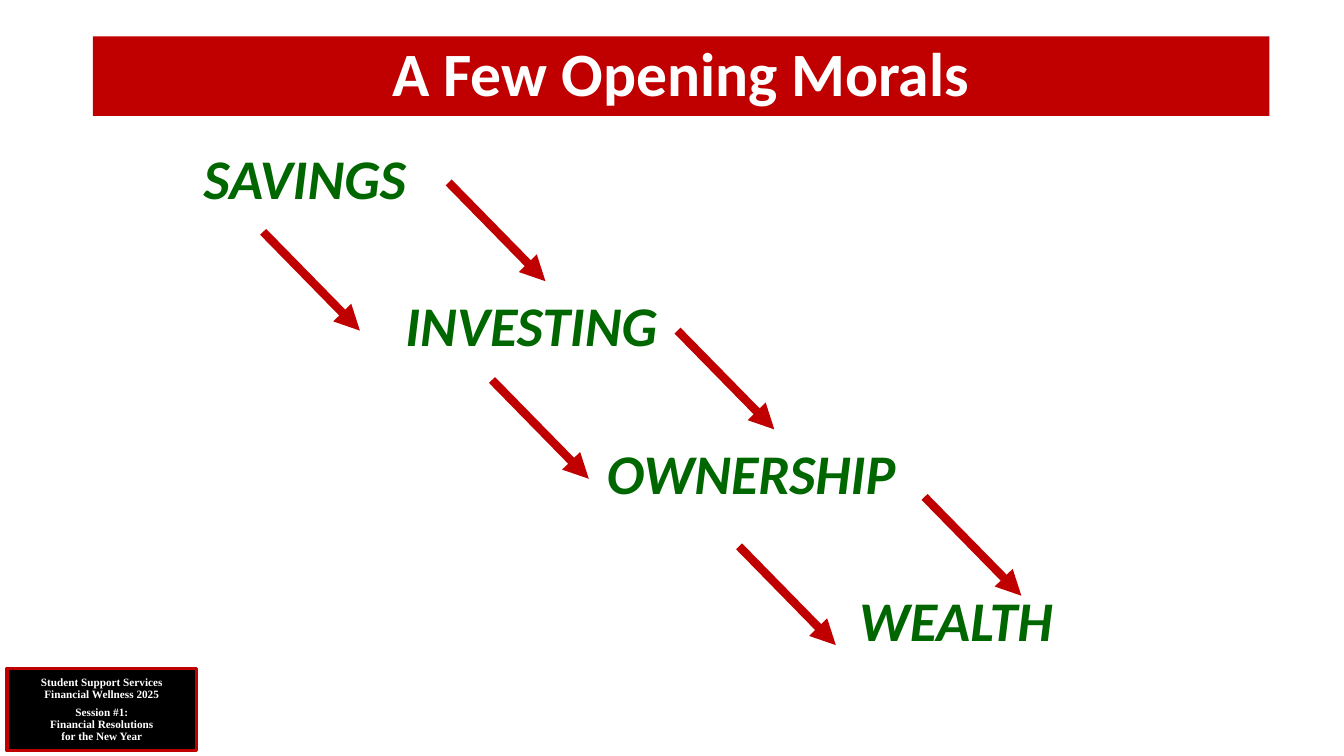
import typing

import pptx
import pptx.dml.color
import pptx.enum.shapes
import pptx.enum.text
import pptx.oxml.ns
import pptx.util
from lxml import etree

PX = 9144  # 100 px to the inch
RED, GREEN, WHITE, BLACK = "C00000", "006600", "FFFFFF", "000000"
Anchor = pptx.enum.text.MSO_ANCHOR
Align = pptx.enum.text.PP_ALIGN


class Step(typing.NamedTuple):
    word: str
    indent: int


class Start(typing.NamedTuple):
    x: int
    y: int


STEPS = [Step("SAVINGS", 100), Step("INVESTING", 300),
         Step("OWNERSHIP", 500), Step("WEALTH", 750)]
STARTS = [Start(261, 230), Start(488, 377), Start(733, 542)]
SHIFT = Start(184, -49)  # from the lower arrow of a pair to the upper one
RUN, DROP = 96, 98
NOTES = ["Student Support Services", "Financial Wellness 2025",
         "Session #1:\vFinancial Resolutions\vfor the New Year"]


def px(count: int) -> pptx.util.Emu:
    return pptx.util.Emu(count * PX)


def color(code: str) -> pptx.dml.color.RGBColor:
    return pptx.dml.color.RGBColor.from_string(code)


def paint(target, code: str) -> None:
    target.fill.solid()
    target.fill.fore_color.rgb = color(code)


def place(shape, left: int, top: int, width: int, height: int) -> None:
    shape.left, shape.top = px(left), px(top)
    shape.width, shape.height = px(width), px(height)


def setup(frame, anchor) -> None:
    frame.word_wrap = True
    frame.auto_size = pptx.enum.text.MSO_AUTO_SIZE.NONE
    frame.vertical_anchor = anchor


def style(para, size: int, face: str, code: str, align, gap: int = 0) -> None:
    para.alignment = align
    para.line_spacing = 0.9
    para.space_before = pptx.util.Pt(gap)
    para.font.size = pptx.util.Pt(size)
    para.font.name = face
    para.font.bold = True
    para.font.color.rgb = color(code)


def lines(frame, texts: list[str]) -> list:
    """Fill the frame with one paragraph per text."""
    paras = [frame.paragraphs[0]]
    paras += [frame.add_paragraph() for _ in texts[1:]]
    for para, text in zip(paras, texts):
        para.text = text
    return paras


def title(slide) -> None:
    shape = slide.shapes.title
    place(shape, 92, 36, 1167, 79)
    paint(shape, RED)
    setup(shape.text_frame, Anchor.MIDDLE)
    para, = lines(shape.text_frame, ["A Few Opening Morals"])
    style(para, 44, "Calibri", WHITE, Align.CENTER)


def stairs(slide) -> None:
    body = slide.placeholders[1]
    place(body, 92, 145, 1150, 530)
    setup(body.text_frame, Anchor.TOP)
    paras = lines(body.text_frame, [step.word for step in STEPS])
    for rank, (step, para) in enumerate(zip(STEPS, paras)):
        props = para._p.get_or_add_pPr()
        props.set("marL", str(px(step.indent)))
        props.set("indent", "0")
        etree.SubElement(props, pptx.oxml.ns.qn("a:buNone"))
        style(para, 40, "Calibri", GREEN, Align.LEFT, 62 if rank else 0)
        para.font.italic = True


def arrow(slide, x: int, y: int) -> None:
    link = slide.shapes.add_connector(
        pptx.enum.shapes.MSO_CONNECTOR.STRAIGHT,
        px(x), px(y), px(x + RUN), px(y + DROP))
    link.line.color.rgb = color(RED)
    link.line.width = pptx.util.Pt(6)
    qn = pptx.oxml.ns.qn
    etree.SubElement(link.line._get_or_add_ln(), qn("a:tailEnd"), type="triangle")
    etree.SubElement(link._element.spPr, qn("a:effectLst"))


def badge(slide) -> None:
    box = slide.shapes.add_shape(
        pptx.enum.shapes.MSO_SHAPE.RECTANGLE, px(7), px(663), px(188), px(82))
    box.shadow.inherit = False
    paint(box, BLACK)
    box.line.color.rgb = color(RED)
    box.line.width = pptx.util.Pt(2.25)
    setup(box.text_frame, Anchor.MIDDLE)
    for para, gap in zip(lines(box.text_frame, NOTES), (0, 0, 4)):
        style(para, 8, "Times New Roman", WHITE, Align.CENTER, gap)


def main() -> None:
    deck = pptx.Presentation()
    deck.slide_width, deck.slide_height = px(1333), px(750)
    slide = deck.slides.add_slide(deck.slide_layouts[1])
    paint(slide.background, WHITE)
    badge(slide)
    title(slide)
    stairs(slide)
    for start in STARTS:
        arrow(slide, start.x, start.y)
        arrow(slide, start.x + SHIFT.x, start.y + SHIFT.y)
    deck.save("out.pptx")


if __name__ == "__main__":
    main()
